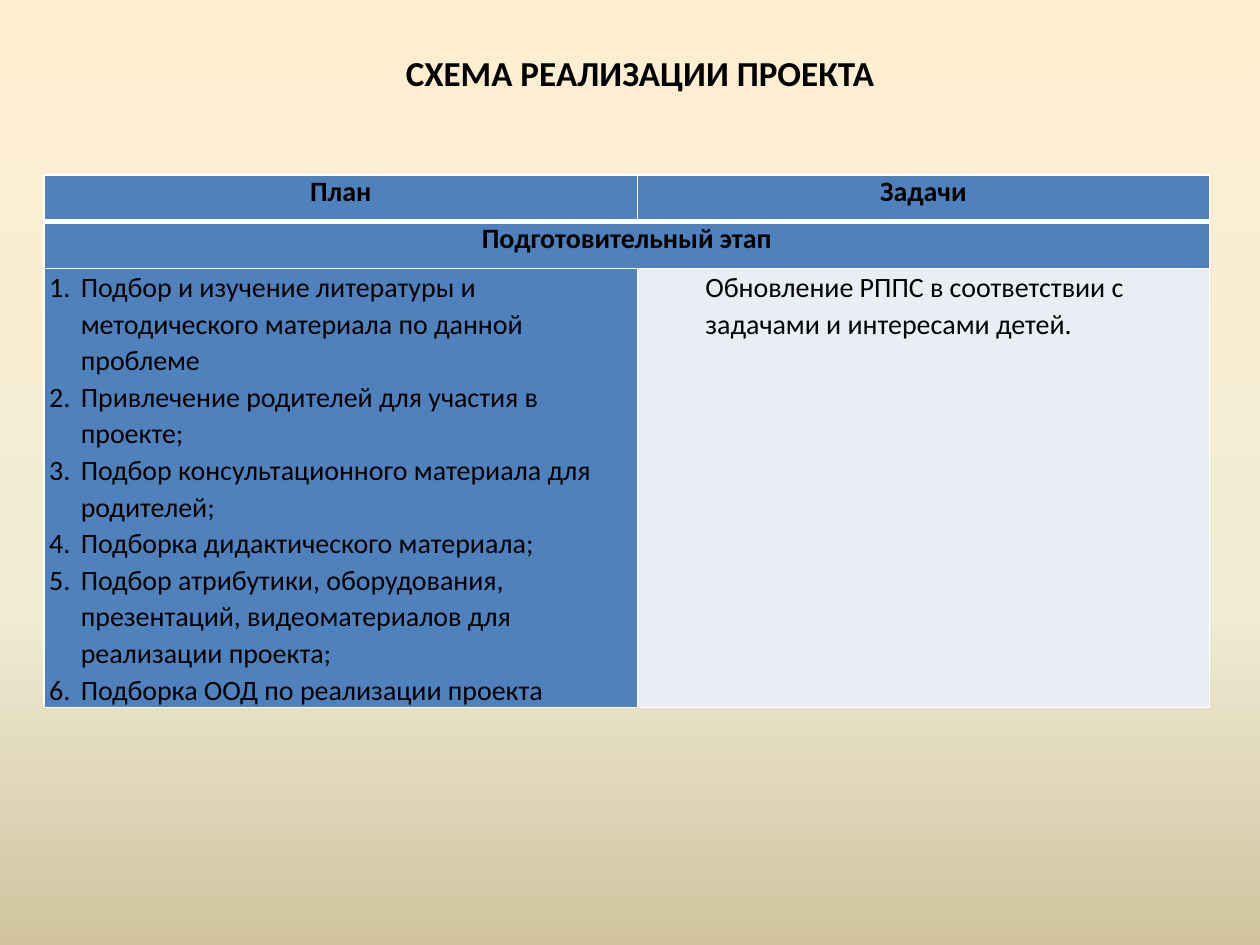
from lxml import etree
from pptx import Presentation
from pptx.dml.color import RGBColor
from pptx.enum.text import MSO_ANCHOR, PP_ALIGN
from pptx.oxml.ns import qn
from pptx.util import Cm, Pt

CENTER, LEFT = PP_ALIGN.CENTER, PP_ALIGN.LEFT
MIDDLE = MSO_ANCHOR.MIDDLE
BLUE, PALE, WHITE, BLACK = "4F81BD", "E9EDF4", "FFFFFF", "000000"

TITLE = "СХЕМА РЕАЛИЗАЦИИ ПРОЕКТА"
HEADS = ["План", "Задачи"]
STAGE = "Подготовительный этап"
PLAN = [
    "Подбор и изучение литературы и методического материала по данной проблеме",
    "Привлечение родителей для участия в проекте;",
    "Подбор консультационного материала для родителей;",
    "Подборка дидактического материала;",
    "Подбор атрибутики, оборудования, презентаций, видеоматериалов для реализации проекта;",
    "Подборка ООД по реализации проекта",
]
TASKS = ["Обновление РППС в соответствии с задачами и интересами детей."]
STOPS = [(0, "FFEFD1"), (65, "F0EBD5"), (100, "D1C39F")]
COLS = [Cm(11.96), Cm(11.53)]
ROWS = [Cm(0.94), Cm(0.94), Cm(7.95)]


def color(code):
    return RGBColor.from_string(code)


def node(parent, tag, **attrs):
    return etree.SubElement(parent, qn(tag), attrs)


def write(frame, lines, size=16, bold=False, align=LEFT, after=0,
          space=1.0, left=0, hang=0, number=False):
    for i, line in enumerate(lines):
        para = frame.paragraphs[0] if i == 0 else frame.add_paragraph()
        props = para._p.get_or_add_pPr()
        props.set("marL", str(left))
        props.set("indent", str(-hang))
        if number:
            node(props, "a:buAutoNum", type="arabicPeriod")
        para.alignment, para.line_spacing = align, space
        para.space_before, para.space_after = Pt(0), Pt(after)
        run = para.add_run()
        run.text = line
        font = run.font
        font.name, font.size, font.bold = "Calibri", Pt(size), bold
        font.color.rgb = color(BLACK)


def style(cell, fill, top=1, base=1):
    """Set the margins, white borders and fill of a cell."""
    cell.margin_left = cell.margin_right = Cm(0.1)
    cell.margin_top = cell.margin_bottom = 0
    props = cell._tc.get_or_add_tcPr()
    for side, width in zip("LRTB", (1, 1, top, base)):
        line = node(props, f"a:ln{side}", w=str(Pt(width)))
        node(node(line, "a:solidFill"), "a:srgbClr", val=WHITE)
    cell.fill.solid()
    cell.fill.fore_color.rgb = color(fill)


def paint(slide):
    """Fill the background with a gradient from top to bottom."""
    fill = slide.background.fill
    fill.gradient()
    fill.gradient_angle = 270
    stops = slide.element.find(".//" + qn("a:gsLst"))
    for stop in list(stops):
        stops.remove(stop)
    for place, code in STOPS:
        node(node(stops, "a:gs", pos=str(place * 1000)), "a:srgbClr", val=code)


def main():
    deck = Presentation()
    deck.slide_width, deck.slide_height = Cm(25.4), Cm(19.05)
    slide = deck.slides.add_slide(deck.slide_layouts[5])
    paint(slide)

    title = slide.shapes.title
    title.left, title.top = Cm(2.11), Cm(0.91)
    title.width, title.height = Cm(21.59), Cm(1.12)
    title.text_frame.vertical_anchor = MIDDLE
    write(title.text_frame, [TITLE], size=20, bold=True, align=CENTER)

    table = slide.shapes.add_table(len(ROWS), len(COLS), Cm(0.89), Cm(3.53),
                                   sum(COLS), sum(ROWS)).table
    for col, width in zip(table.columns, COLS):
        col.width = width
    for row, height in zip(table.rows, ROWS):
        row.height = height

    for c, fill in enumerate((BLUE, PALE)):
        style(table.cell(0, c), BLUE, base=3)
        style(table.cell(1, c), BLUE, top=3)
        style(table.cell(2, c), fill)
    table.cell(1, 0).merge(table.cell(1, 1))

    head = dict(bold=True, align=CENTER, after=6)
    for c, text in enumerate(HEADS):
        write(table.cell(0, c).text_frame, [text], **head)
    write(table.cell(1, 0).text_frame, [STAGE], **head)
    write(table.cell(2, 0).text_frame, PLAN, space=1.07,
          left=Cm(0.64), hang=Cm(0.64), number=True)
    write(table.cell(2, 1).text_frame, TASKS, space=1.07, left=Cm(1.27))
    deck.save("out.pptx")


if __name__ == "__main__":
    main()
